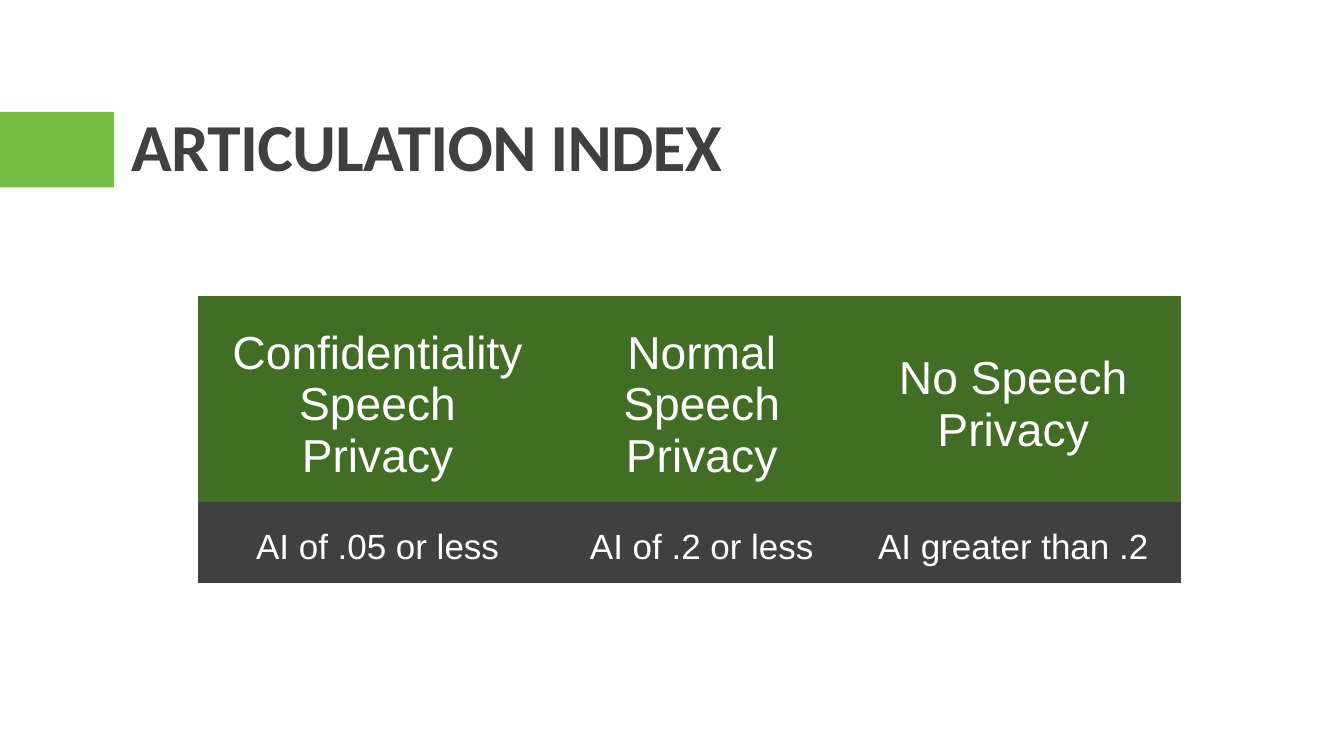
"""Build the Articulation Index slide with its speech privacy table."""
from pptx import Presentation
from pptx.dml.color import RGBColor
from pptx.enum.shapes import MSO_SHAPE
from pptx.enum.text import MSO_ANCHOR, PP_ALIGN
from pptx.util import Inches, Pt


def paint(fill, color):
    fill.solid()
    fill.fore_color.rgb = RGBColor.from_string(color)


def add_span(para, text, font, size, color):
    span = para.add_run()
    span.text = text
    span.font.name = font
    span.font.size = Pt(size)
    span.font.color.rgb = RGBColor.from_string(color)
    return span


deck = Presentation()
deck.slide_width = Inches(13.33)
deck.slide_height = Inches(7.5)
page = deck.slides.add_slide(deck.slide_layouts[5])
paint(page.background.fill, "FFFFFF")

accent = page.shapes.add_shape(
    MSO_SHAPE.RECTANGLE, Inches(0), Inches(1.11), Inches(1.13), Inches(0.75))
accent.shadow.inherit = False
paint(accent.fill, "75C044")
accent.line.fill.background()

title = page.shapes.title
title.left, title.top = Inches(1.2), Inches(0.31)
title.width, title.height = Inches(11), Inches(1.59)
title.text_frame.word_wrap = True
title.text_frame.vertical_anchor = MSO_ANCHOR.BOTTOM
para = title.text_frame.paragraphs[0]
para.alignment = PP_ALIGN.LEFT
para.line_spacing = 0.9
span = add_span(para, "ARTICULATION INDEX", "Calibri", 48, "404040")
span.font.bold = True
span._r.get_or_add_rPr().set("spc", "-50")

column_widths = [3.57, 2.86, 3.32]
rows = [
    (2.04, 33, "426D25", [["Confidentiality", "Speech Privacy"],
                          ["Normal Speech", "Privacy"],
                          ["No Speech", "Privacy"]]),
    (0.8, 25, "404040", [["AI of .05 or less"],
                         ["AI of .2 or less"],
                         ["AI greater than .2"]]),
]
frame = page.shapes.add_table(
    len(rows), len(column_widths), Inches(1.96), Inches(2.94),
    Inches(sum(column_widths)), Inches(sum(row[0] for row in rows)))
table = frame.table
table.first_row = False
table.horz_banding = False
style = table._tbl.tblPr[0]
style.text = "{2D5ABB26-0587-4C30-8999-92F81FD0307C}"

for column, width in zip(table.columns, column_widths):
    column.width = Inches(width)

for row_index, (height, size, color, entries) in enumerate(rows):
    table.rows[row_index].height = Inches(height)
    for column_index, lines in enumerate(entries):
        cell = table.cell(row_index, column_index)
        paint(cell.fill, color)
        cell.vertical_anchor = MSO_ANCHOR.MIDDLE
        cell.margin_left = cell.margin_right = cell.margin_top = Inches(0.21)
        cell.margin_bottom = Inches(0.1)
        para = cell.text_frame.paragraphs[0]
        para.alignment = PP_ALIGN.CENTER
        for line_index, line in enumerate(lines):
            if line_index:
                para.add_line_break()
            add_span(para, line, "Arial", size, "FFFFFF")

deck.save("out.pptx")
